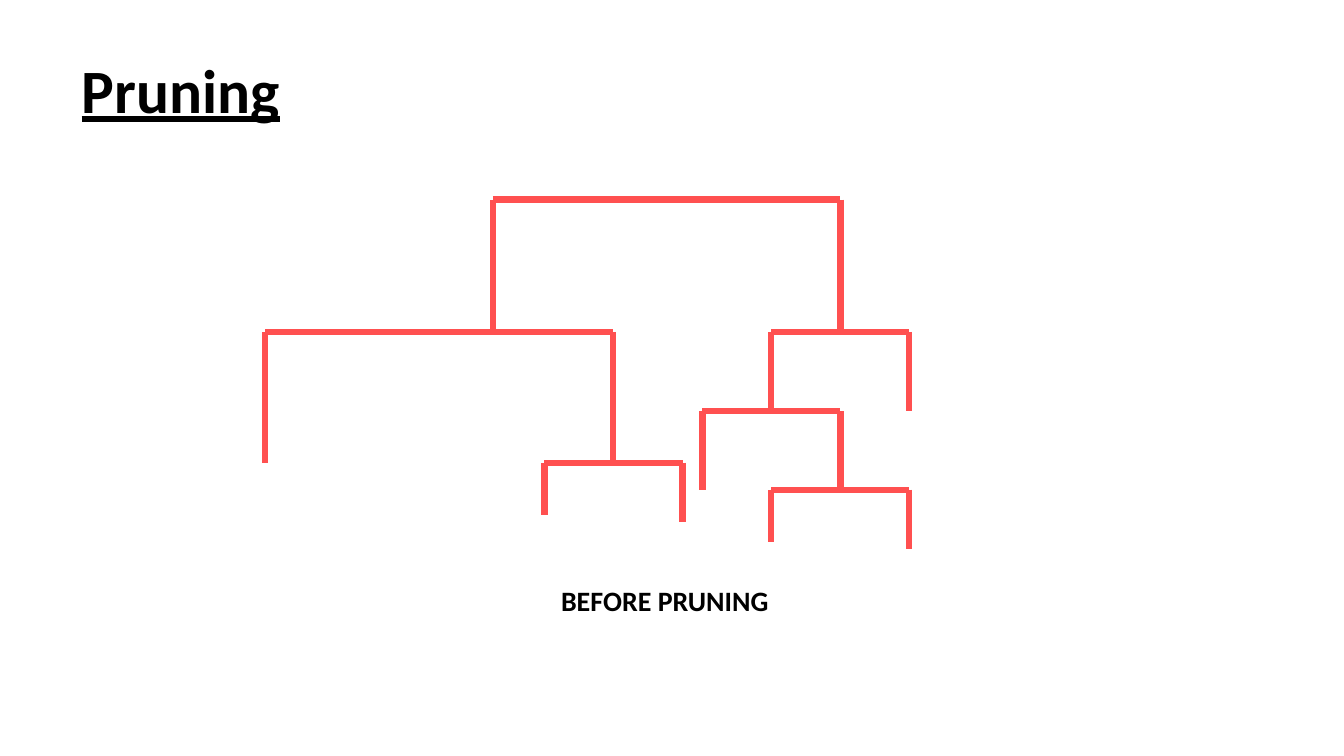
from lxml import etree
from pptx import Presentation
from pptx.dml.color import RGBColor
from pptx.enum.shapes import MSO_CONNECTOR
from pptx.enum.text import MSO_ANCHOR, MSO_AUTO_SIZE, PP_ALIGN
from pptx.oxml.ns import qn
from pptx.util import Cm, Pt

STRAIGHT = MSO_CONNECTOR.STRAIGHT
MIDDLE = MSO_ANCHOR.MIDDLE
NO_FIT = MSO_AUTO_SIZE.NONE
GROW = MSO_AUTO_SIZE.SHAPE_TO_FIT_TEXT
LEFT = PP_ALIGN.LEFT

COLORS = {"text": "000000", "branch": "FF5050"}
FONT = "Calibri"

# Each fork: left x, right x, bar y, left foot y, right foot y
FORKS = [
    (12.42, 21.18, 5.03, 8.34, 8.34),
    (19.43, 22.91, 8.36, 10.36, 10.36),
    (17.7, 21.18, 10.36, 12.34, 12.34),
    (19.43, 22.91, 12.34, 13.67, 13.84),
    (6.68, 15.44, 8.36, 11.66, 11.66),
    (13.72, 17.2, 11.66, 12.98, 13.16),
]


def color(name):
    """Return a named colour."""
    return RGBColor.from_string(COLORS[name])


def add_run(par, text, size, under=False):
    """Add one bold run to a paragraph."""
    run = par.add_run()
    run.text = text
    font = run.font
    font.name, font.size = FONT, Pt(size)
    font.bold, font.underline = True, under
    font.color.rgb = color("text")


def set_title(slide, text):
    """Place and fill the title."""
    title = slide.shapes.title
    title.left, title.top = Cm(1.8), Cm(0.51)
    title.width, title.height = Cm(29.21), Cm(3.68)
    frame = title.text_frame
    frame.vertical_anchor, frame.auto_size = MIDDLE, NO_FIT
    par = frame.paragraphs[0]
    par.alignment, par.line_spacing = LEFT, 0.9
    add_run(par, text, 44, under=True)


def add_label(slide, text):
    """Add the caption below the tree."""
    box = slide.shapes.add_textbox(Cm(13.89), Cm(14.58), Cm(5.79), Cm(1.11))
    frame = box.text_frame
    frame.word_wrap, frame.auto_size = False, GROW
    add_run(frame.paragraphs[0], text, 20)


def add_line(slide, *ends):
    """Draw one branch line between two points."""
    line = slide.shapes.add_connector(STRAIGHT, *map(Cm, ends))
    line.line.color.rgb = color("branch")
    line.line.width = Pt(4.5)
    etree.SubElement(line._element.spPr, qn("a:effectLst"))


def add_fork(slide, left, right, top, left_foot, right_foot):
    """Draw a bar with a leg at each end."""
    add_line(slide, left, top, right, top)
    add_line(slide, left, top, left, left_foot)
    add_line(slide, right, top, right, right_foot)


def main():
    """Build and save the slide."""
    deck = Presentation()
    deck.slide_width, deck.slide_height = Cm(33.87), Cm(19.05)
    slide = deck.slides.add_slide(deck.slide_layouts[5])
    set_title(slide, "Pruning")
    for fork in FORKS:
        add_fork(slide, *fork)
    add_label(slide, "BEFORE PRUNING")
    deck.save("out.pptx")


if __name__ == "__main__":
    main()
